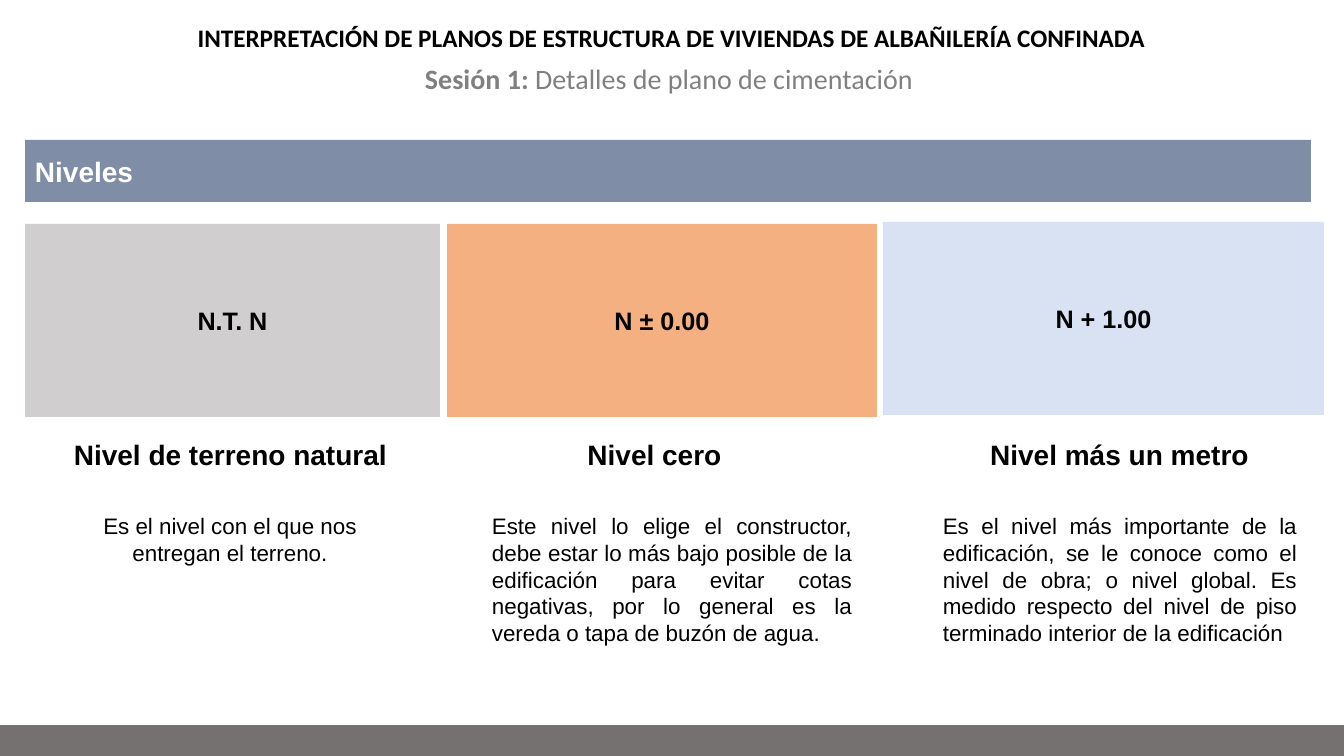
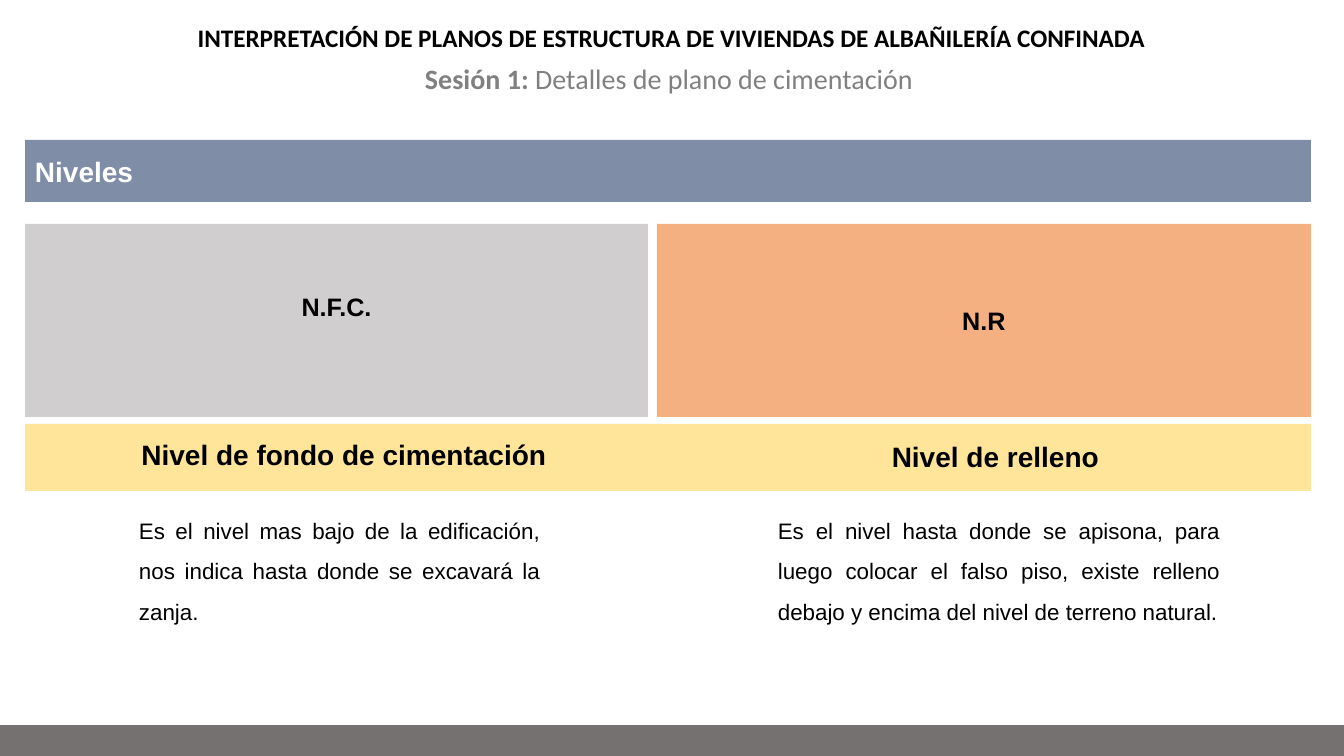
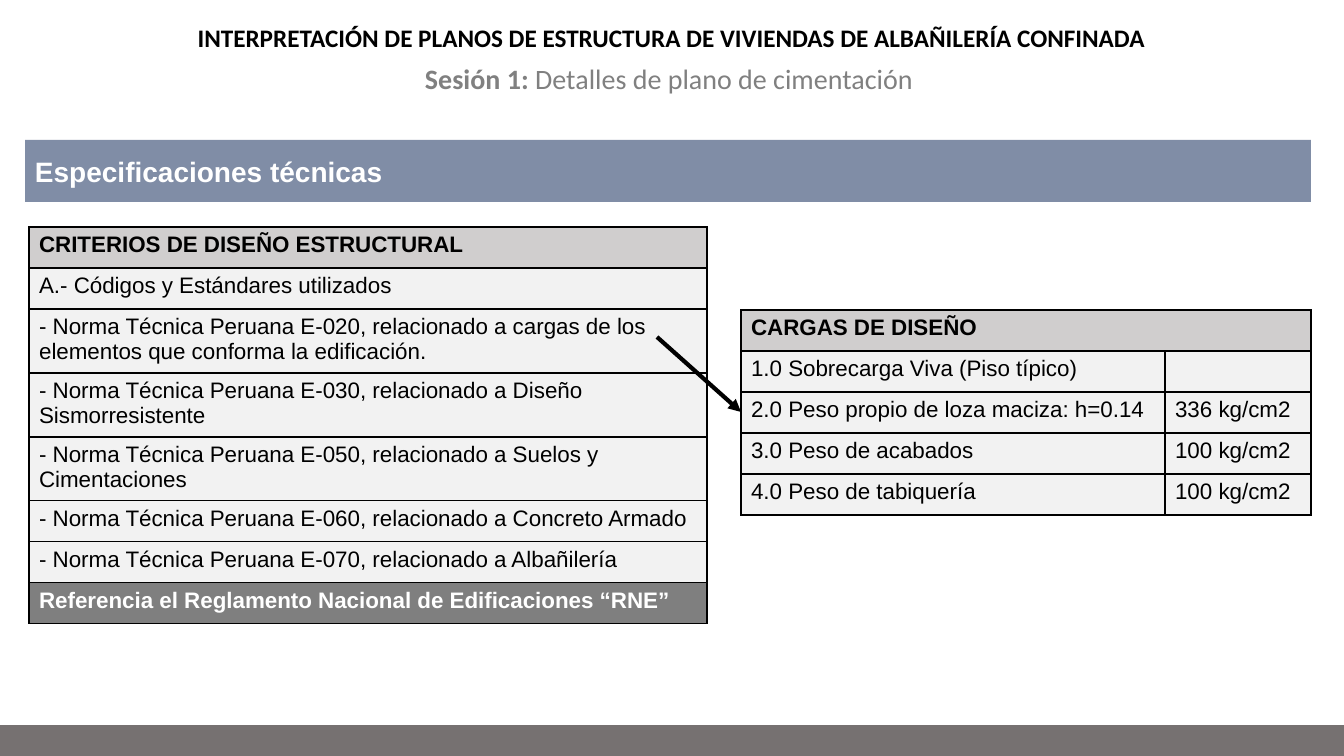
from dataclasses import dataclass

from lxml import etree
from pptx import Presentation
from pptx.dml import color as dml
from pptx.enum import shapes, text
from pptx.oxml import ns
from pptx.util import Emu, Pt

SCALE = 914400 / 100.8
WIDTH, HEIGHT = 1344, 756

BLACK = dml.RGBColor(0x00, 0x00, 0x00)
WHITE = dml.RGBColor(0xFF, 0xFF, 0xFF)
NAVY = dml.RGBColor(0x20, 0x38, 0x64)
FOOTER_GRAY = dml.RGBColor(0x76, 0x71, 0x71)
SESSION_GRAY = dml.RGBColor(0x80, 0x80, 0x80)
SILVER = dml.RGBColor(0xD0, 0xCE, 0xCE)
ORANGE = dml.RGBColor(0xF4, 0xB0, 0x81)
SKY = dml.RGBColor(0xD8, 0xE2, 0xF3)
YELLOW = dml.RGBColor(0xFE, 0xE5, 0x99)
PALE = dml.RGBColor(0xF2, 0xF2, 0xF2)
DARK = dml.RGBColor(0x7F, 0x7F, 0x7F)

CENTER = text.PP_ALIGN.CENTER
LEFT = text.PP_ALIGN.LEFT
JUSTIFY = text.PP_ALIGN.JUSTIFY

COURSE = dict(name="Calibri", size=Pt(18), bold=True)
SESSION = dict(name="Calibri", size=Pt(20), bold=True)
SESSION_TOPIC = SESSION | dict(bold=False)
CAPTION = dict(name="Arial", size=Pt(20), bold=True)
SIGN = dict(name="Arial", size=Pt(18), bold=True)
BODY = dict(name="Arial", size=Pt(16), bold=False)
BODY_BOLD = BODY | dict(bold=True)

HEADER_BOX = (0, 0, WIDTH, 202)
BAND_LEFT, BAND_WIDTH = 25, 1286
ROW, TALL_ROW = 41, 64


@dataclass
class Level:
    sign: str
    fill: dml.RGBColor
    caption: str
    meaning: str
    box: tuple
    caption_at: tuple
    meaning_at: tuple
    align: int = JUSTIFY
    spacing: float = 1.0
    lift: int = 0


def px(length):
    return Emu(round(length * SCALE))


def within(box, part):
    return box[0] + part[0], box[1] + part[1], part[2], part[3]


def assign(target, values):
    for key, value in values.items():
        setattr(target, key, value)


def write(frame, runs, color, align=LEFT, spacing=1.0):
    paragraph = frame.paragraphs[0]
    assign(paragraph, dict(alignment=align, line_spacing=spacing))
    for words, style in runs:
        run = paragraph.add_run()
        run.text = words
        assign(run.font, style)
        run.font.color.rgb = color


def add_block(slide, box, fill):
    block = slide.shapes.add_shape(shapes.MSO_SHAPE.RECTANGLE, *map(px, box))
    block.shadow.inherit = False
    block.fill.solid()
    block.fill.fore_color.rgb = fill
    block.line.fill.background()
    return block


def add_text(slide, box, runs, color=BLACK, align=CENTER, spacing=1.0):
    frame = slide.shapes.add_textbox(*map(px, box)).text_frame
    assign(frame, dict(word_wrap=True, auto_size=text.MSO_AUTO_SIZE.SHAPE_TO_FIT_TEXT))
    write(frame, runs, color, align, spacing)


def add_header(slide, box, topic):
    band = add_block(slide, within(box, (BAND_LEFT, 140, BAND_WIDTH, 62)), NAVY)
    tint = band.fill._xPr.find(".//" + ns.qn("a:srgbClr"))
    etree.SubElement(tint, ns.qn("a:alpha"), val="57000")
    band.text_frame.vertical_anchor = text.MSO_ANCHOR.MIDDLE
    write(band.text_frame, [(topic, CAPTION)], WHITE)

    course = slide.shapes.title
    places = map(px, within(box, (20, 17, 1303, 40)))
    assign(course, dict(zip(("left", "top", "width", "height"), places)))
    assign(course.text_frame, dict(
        word_wrap=True,
        auto_size=text.MSO_AUTO_SIZE.NONE,
        vertical_anchor=text.MSO_ANCHOR.TOP,
    ))
    write(course.text_frame, [(
        "INTERPRETACIÓN DE PLANOS DE ESTRUCTURA DE VIVIENDAS DE ALBAÑILERÍA CONFINADA",
        COURSE,
    )], BLACK, CENTER)
    add_text(slide, within(box, (15, 57, 1308, 44)), [
        ("Sesión 1: ", SESSION),
        ("Detalles de plano de cimentación", SESSION_TOPIC),
    ], SESSION_GRAY)


def add_level(slide, level):
    sign = add_block(slide, level.box, level.fill).text_frame
    assign(sign, dict(vertical_anchor=text.MSO_ANCHOR.MIDDLE, margin_bottom=px(5 + level.lift)))
    write(sign, [(level.sign, SIGN)], BLACK, CENTER)
    add_text(slide, within(level.box, level.caption_at), [(level.caption, CAPTION)])
    add_text(slide, within(level.box, level.meaning_at), [(level.meaning, BODY)],
             align=level.align, spacing=level.spacing)


def add_border(cell):
    properties = cell._tc.get_or_add_tcPr()
    for side in ("lnL", "lnR", "lnT", "lnB"):
        edge = etree.SubElement(properties, ns.qn("a:" + side), w=str(Pt(1)))
        paint = etree.SubElement(edge, ns.qn("a:solidFill"))
        etree.SubElement(paint, ns.qn("a:srgbClr"), val=str(BLACK))


def add_grid(slide, origin, widths, heights, rows, accents):
    box = (*origin, sum(widths), sum(heights))
    grid = slide.shapes.add_table(len(rows), len(widths), *map(px, box)).table
    assign(grid, dict(first_row=False, horz_banding=False))
    for column, width in zip(grid.columns, widths):
        column.width = px(width)
    for index, (row, height, entries) in enumerate(zip(grid.rows, heights, rows)):
        row.height = px(height)
        fill, color, style = accents.get(index, (PALE, BLACK, BODY))
        for cell, entry in zip(row.cells, entries):
            add_border(cell)
            cell.fill.solid()
            cell.fill.fore_color.rgb = fill
            if entry:
                write(cell.text_frame, [(entry, style)], color)
    if len(widths) > 1:
        grid.cell(0, 0).merge(grid.cell(0, len(widths) - 1))


def add_arrow(slide, start, end):
    arrow = slide.shapes.add_connector(
        shapes.MSO_CONNECTOR.STRAIGHT, *map(px, (*start, *end)))
    arrow.line.color.rgb = BLACK
    arrow.line.width = Pt(3)
    etree.SubElement(arrow.line._get_or_add_ln(), ns.qn("a:tailEnd"), type="triangle")
    etree.SubElement(arrow._element.spPr, ns.qn("a:effectLst"))


def add_slide(deck, topic):
    slide = deck.slides.add_slide(deck.slide_layouts[5])
    add_header(slide, HEADER_BOX, topic)
    return slide


def add_footer(deck, slide):
    footer = add_block(slide, (0, 725, WIDTH, 31), FOOTER_GRAY)
    deck.slide_master.shapes.element.insert(2, footer._element)


def add_levels_slide(deck, levels, strip=None):
    slide = add_slide(deck, "Niveles")
    if strip:
        add_block(slide, strip, YELLOW)
    for level in levels:
        add_level(slide, level)
    return slide


def add_specifications_slide(deck):
    slide = add_slide(deck, "Especificaciones técnicas")
    heading = (SILVER, BLACK, BODY_BOLD)
    criteria = [
        "CRITERIOS DE DISEÑO ESTRUCTURAL",
        "A.- Códigos y Estándares utilizados",
        "- Norma Técnica Peruana E-020, relacionado a cargas de los elementos que conforma la edificación.",
        "- Norma Técnica Peruana E-030, relacionado a Diseño Sismorresistente",
        "- Norma Técnica Peruana E-050, relacionado a Suelos y Cimentaciones",
        "- Norma Técnica Peruana E-060, relacionado a Concreto Armado",
        "- Norma Técnica Peruana E-070, relacionado a Albañilería",
        "Referencia el Reglamento Nacional de Edificaciones “RNE”",
    ]
    loads = [
        ("CARGAS DE DISEÑO", ""),
        ("1.0 Sobrecarga Viva (Piso típico)", ""),
        ("2.0 Peso propio de loza maciza: h=0.14", "336 kg/cm2"),
        ("3.0 Peso de acabados", "100 kg/cm2"),
        ("4.0 Peso de tabiquería", "100 kg/cm2"),
    ]
    add_grid(slide, (29, 227), [678], [ROW] * 2 + [TALL_ROW] * 3 + [ROW] * 3,
             [(criterion,) for criterion in criteria],
             {0: heading, len(criteria) - 1: (DARK, WHITE, BODY_BOLD)})
    add_grid(slide, (741, 310), [424, 146], [ROW] * len(loads), loads, {0: heading})
    add_arrow(slide, (657, 337), (741, 412))


SITE_LEVELS = [
    Level("N.T. N", SILVER, "Nivel de terreno natural",
          "Es el nivel con el que nos entregan el terreno.",
          (25, 224, 415, 193), (10, 209, 391, 44), (28, 283, 354, 65), align=CENTER),
    Level("N ± 0.00", ORANGE, "Nivel cero",
          "Este nivel lo elige el constructor, debe estar lo más bajo posible de la "
          "edificación para evitar cotas negativas, por lo general es la vereda o tapa "
          "de buzón de agua.",
          (447, 224, 430, 193), (130, 209, 155, 44), (35, 283, 380, 146)),
    Level("N + 1.00", SKY, "Nivel más un metro",
          "Es el nivel más importante de la edificación, se le conoce como el nivel de "
          "obra; o nivel global. Es medido respecto del nivel de piso terminado interior "
          "de la edificación",
          (883, 222, 441, 193), (96, 211, 281, 44), (50, 285, 374, 146)),
]
FOUNDATION_LEVELS = [
    Level("N.F.C.", SILVER, "Nivel de fondo de cimentación",
          "Es el nivel mas bajo de la edificación, nos indica hasta donde se excavará la zanja.",
          (25, 224, 623, 193), (75, 209, 488, 44), (104, 275, 421, 132),
          spacing=1.5, lift=29),
    Level("N.R", ORANGE, "Nivel de relleno",
          "Es el nivel hasta donde se apisona, para luego colocar el falso piso, existe "
          "relleno debajo y encima del nivel de terreno natural.",
          (657, 224, 654, 193), (224, 211, 229, 44), (111, 275, 462, 132), spacing=1.5),
]


def main():
    deck = Presentation()
    assign(deck, dict(slide_width=px(WIDTH), slide_height=px(HEIGHT)))
    add_footer(deck, add_levels_slide(deck, SITE_LEVELS))
    add_levels_slide(deck, FOUNDATION_LEVELS, (BAND_LEFT, 424, BAND_WIDTH, 67))
    add_specifications_slide(deck)
    deck.save("out.pptx")


if __name__ == "__main__":
    main()
